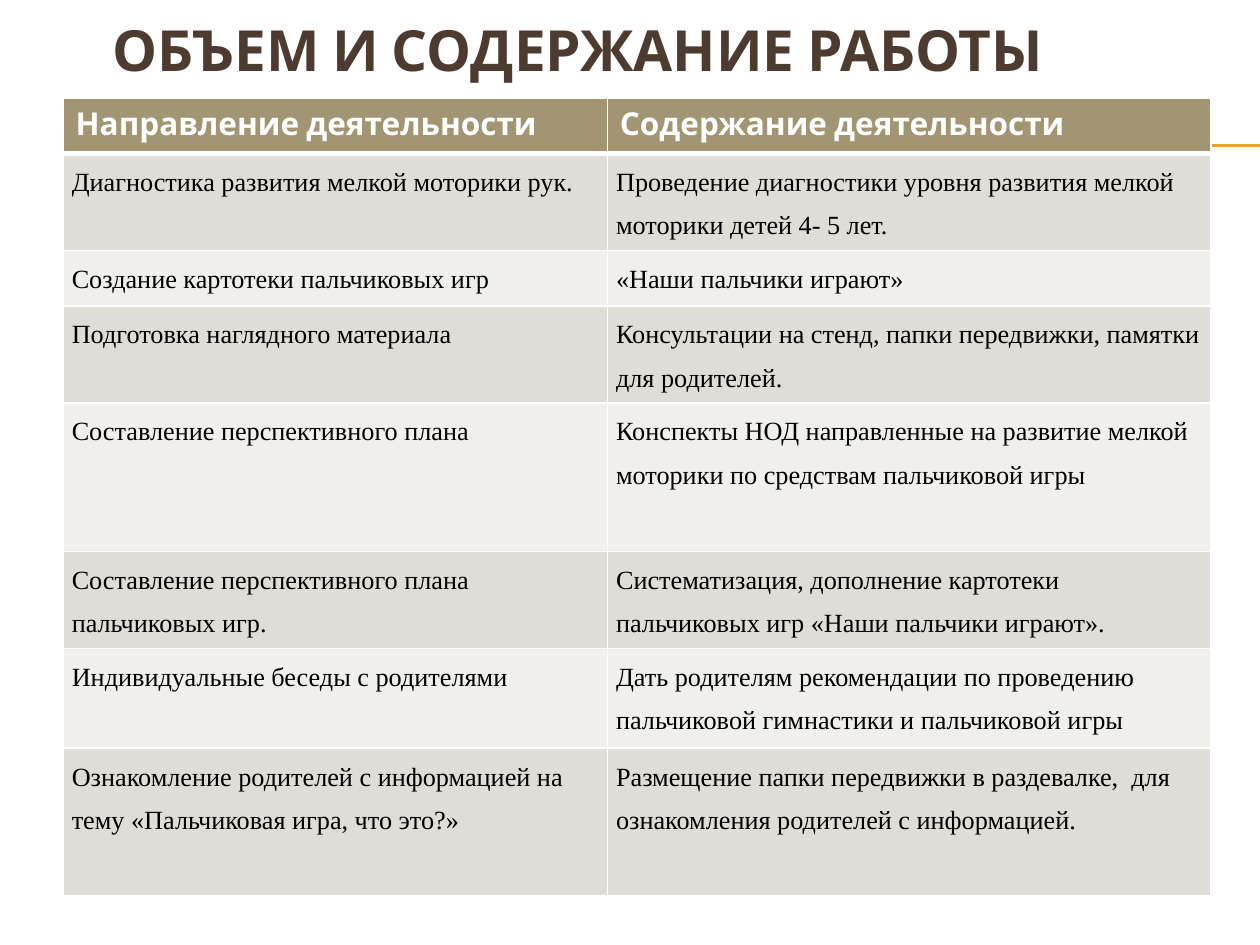
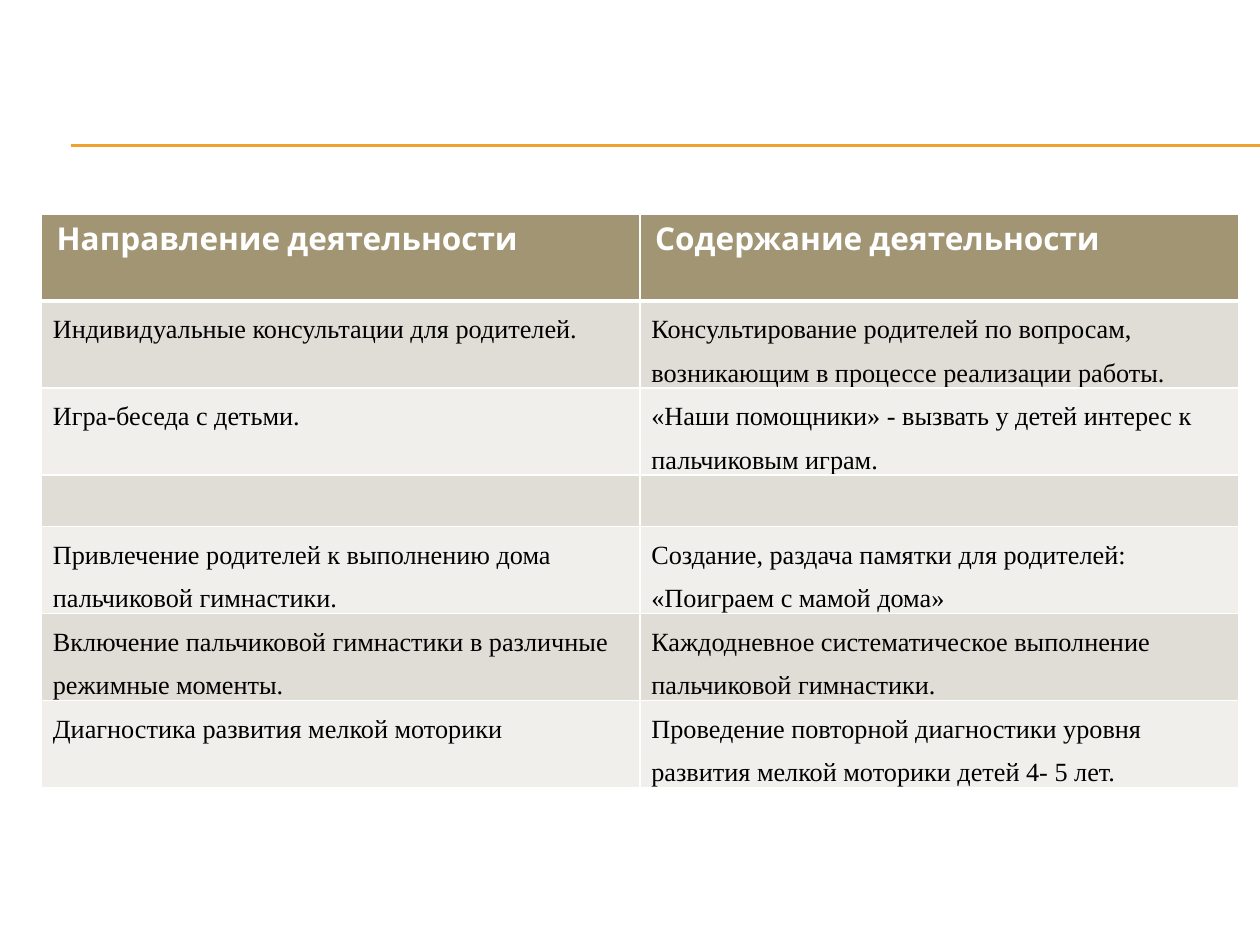
from dataclasses import dataclass
from typing import Any

from lxml.etree import Element, SubElement
from pptx import Presentation
from pptx.dml.color import RGBColor
from pptx.enum.shapes import MSO_CONNECTOR
from pptx.enum.text import MSO_ANCHOR, PP_ALIGN
from pptx.oxml.ns import qn
from pptx.util import Emu, Inches, Pt

GRID_COLS = 100
SLIDE_W, SLIDE_H = Inches(10), Inches(7.5)

GOLD, BROWN, KHAKI = "F0A22E", "4E3B30", "A19574"
WHITE, BLACK = "FFFFFF", "000000"
BANDS = ("E0DDD6", "F0EFEB")
HEADINGS = ("Направление деятельности", "Содержание деятельности")

TITLE_FONT = {"name": "Cabin", "size": Pt(32.4), "bold": True}
HEAD_FONT = {"name": "Cabin", "size": Pt(18), "bold": True}
BODY_FONT = {"name": "Times New Roman", "size": Pt(15), "bold": False}
BODY_SPACING = {"line_spacing": 1.5, "space_after": Pt(10)}


@dataclass(frozen=True)
class Rule:
    left: float
    top: float


@dataclass(frozen=True)
class ActivityTable:
    left: float
    top: float
    cols: tuple[float, ...]
    rows: tuple[float, ...]
    head_margin: float
    body_margin: float
    activities: tuple[tuple[str, str], ...]


@dataclass(frozen=True)
class ActivitySlide:
    title: str
    table: ActivityTable


RULES = (Rule(5.6, 11.5), Rule(5.6, 11.6))

SLIDES = (
    ActivitySlide(
        "ОБЪЕМ И СОДЕРЖАНИЕ РАБОТЫ",
        ActivityTable(
            5, 7.8, (43.2, 47.9),
            (4.4, 7.7, 4.4, 7.7, 11.8, 7.7, 7.9, 11.7), 1, 0.7,
            (
                ("Диагностика развития мелкой моторики рук.",
                 "Проведение диагностики уровня развития мелкой моторики детей 4- 5 лет."),
                ("Создание картотеки пальчиковых игр",
                 "«Наши пальчики играют»"),
                ("Подготовка наглядного материала",
                 "Консультации на стенд, папки передвижки, памятки для родителей."),
                ("Составление перспективного плана",
                 "Конспекты НОД направленные на развитие мелкой моторики "
                 "по средствам пальчиковой игры"),
                ("Составление перспективного плана пальчиковых игр.",
                 "Систематизация, дополнение картотеки пальчиковых игр "
                 "«Наши пальчики играют»."),
                ("Индивидуальные беседы с родителями",
                 "Дать родителям рекомендации по проведению пальчиковой гимнастики "
                 "и пальчиковой игры"),
                ("Ознакомление родителей с информацией на тему "
                 "«Пальчиковая игра, что это?»",
                 "Размещение папки передвижки в раздевалке,  для ознакомления "
                 "родителей с информацией."),
            ),
        ),
    ),
    ActivitySlide(
        "",
        ActivityTable(
            3.3, 17, (47.5, 47.5),
            (6.9, 6.9, 6.9, 4.1, 6.9, 6.9, 6.9), 1.2, 0.9,
            (
                ("Индивидуальные консультации для родителей.",
                 "Консультирование родителей по вопросам, возникающим "
                 "в процессе реализации работы."),
                ("Игра-беседа с детьми.",
                 "«Наши помощники» - вызвать у детей интерес к пальчиковым играм."),
                ("", ""),
                ("Привлечение родителей к выполнению дома пальчиковой гимнастики.",
                 "Создание, раздача памятки для родителей: «Поиграем с мамой дома»"),
                ("Включение пальчиковой гимнастики в различные режимные моменты.",
                 "Каждодневное систематическое выполнение пальчиковой гимнастики."),
                ("Диагностика развития мелкой моторики",
                 "Проведение повторной диагностики уровня развития мелкой моторики "
                 "детей 4- 5 лет."),
            ),
        ),
    ),
)


def grid(n: float) -> Emu:
    return Emu(round(SLIDE_W * n / GRID_COLS))


def color(value: str) -> RGBColor:
    return RGBColor.from_string(value)


def apply(target: Any, values: dict[str, Any]) -> None:
    for name, value in values.items():
        setattr(target, name, value)


def add_run(p: Any, text: str, font: dict[str, Any], ink: str) -> None:
    r = p.add_run()
    r.text = text
    apply(r.font, font)
    r.font.color.rgb = color(ink)


def draw_rule(s: Any, rule: Rule) -> None:
    y = grid(rule.top)
    cxn = s.shapes.add_connector(MSO_CONNECTOR.STRAIGHT, grid(rule.left), y, SLIDE_W, y)
    cxn.line.color.rgb = color(GOLD)
    cxn.line.width = Pt(0.75)
    SubElement(cxn._element.spPr, qn("a:effectLst"))


def draw_title(s: Any, text: str) -> None:
    sp = s.shapes.add_textbox(grid(5), grid(3), grid(81.7), grid(7.2))
    tf = sp.text_frame
    apply(tf, {"word_wrap": True, "vertical_anchor": MSO_ANCHOR.MIDDLE})
    p = tf.paragraphs[0]
    apply(p, {"alignment": PP_ALIGN.CENTER})
    apply(p.font, TITLE_FONT)
    add_run(p, text, TITLE_FONT, BROWN)
    p.add_line_break()


def set_borders(cell: Any, top: float, bottom: float) -> None:
    tc_pr = cell._tc.get_or_add_tcPr()
    widths = {"lnL": 1, "lnR": 1, "lnT": top, "lnB": bottom}
    for i, (side, width) in enumerate(widths.items()):
        ln = Element(qn(f"a:{side}"), w=str(Pt(width)))
        SubElement(SubElement(ln, qn("a:solidFill")), qn("a:srgbClr"), val=WHITE)
        tc_pr.insert(i, ln)


def fill_cell(cell: Any, text: str, row: int, spec: ActivityTable) -> None:
    head = row == 0
    side = grid(spec.head_margin if head else spec.body_margin)
    edge = grid(0.5 if head else 0)
    apply(cell, {"margin_left": side, "margin_right": side,
                 "margin_top": edge, "margin_bottom": edge})
    cell.fill.solid()
    cell.fill.fore_color.rgb = color(KHAKI if head else BANDS[(row - 1) % 2])
    set_borders(cell, 3 if row == 1 else 1, 3 if head else 1)
    if text:
        p = cell.text_frame.paragraphs[0]
        apply(p, {} if head else BODY_SPACING)
        add_run(p, text, HEAD_FONT if head else BODY_FONT, WHITE if head else BLACK)


def draw_table(s: Any, spec: ActivityTable) -> None:
    frame = s.shapes.add_table(
        len(spec.rows), len(spec.cols), grid(spec.left), grid(spec.top),
        grid(sum(spec.cols)), grid(sum(spec.rows)))
    tbl = frame.table
    for col, width in zip(tbl.columns, spec.cols):
        col.width = grid(width)
    for row, height in zip(tbl.rows, spec.rows):
        row.height = grid(height)
    for i, texts in enumerate((HEADINGS, *spec.activities)):
        for j, text in enumerate(texts):
            fill_cell(tbl.cell(i, j), text, i, spec)


def main() -> None:
    prs = Presentation()
    apply(prs, {"slide_width": SLIDE_W, "slide_height": SLIDE_H})
    for content in SLIDES:
        s = prs.slides.add_slide(prs.slide_layouts[6])
        for rule in RULES:
            draw_rule(s, rule)
        if content.title:
            draw_title(s, content.title)
        draw_table(s, content.table)
    prs.save("out.pptx")


if __name__ == "__main__":
    main()
